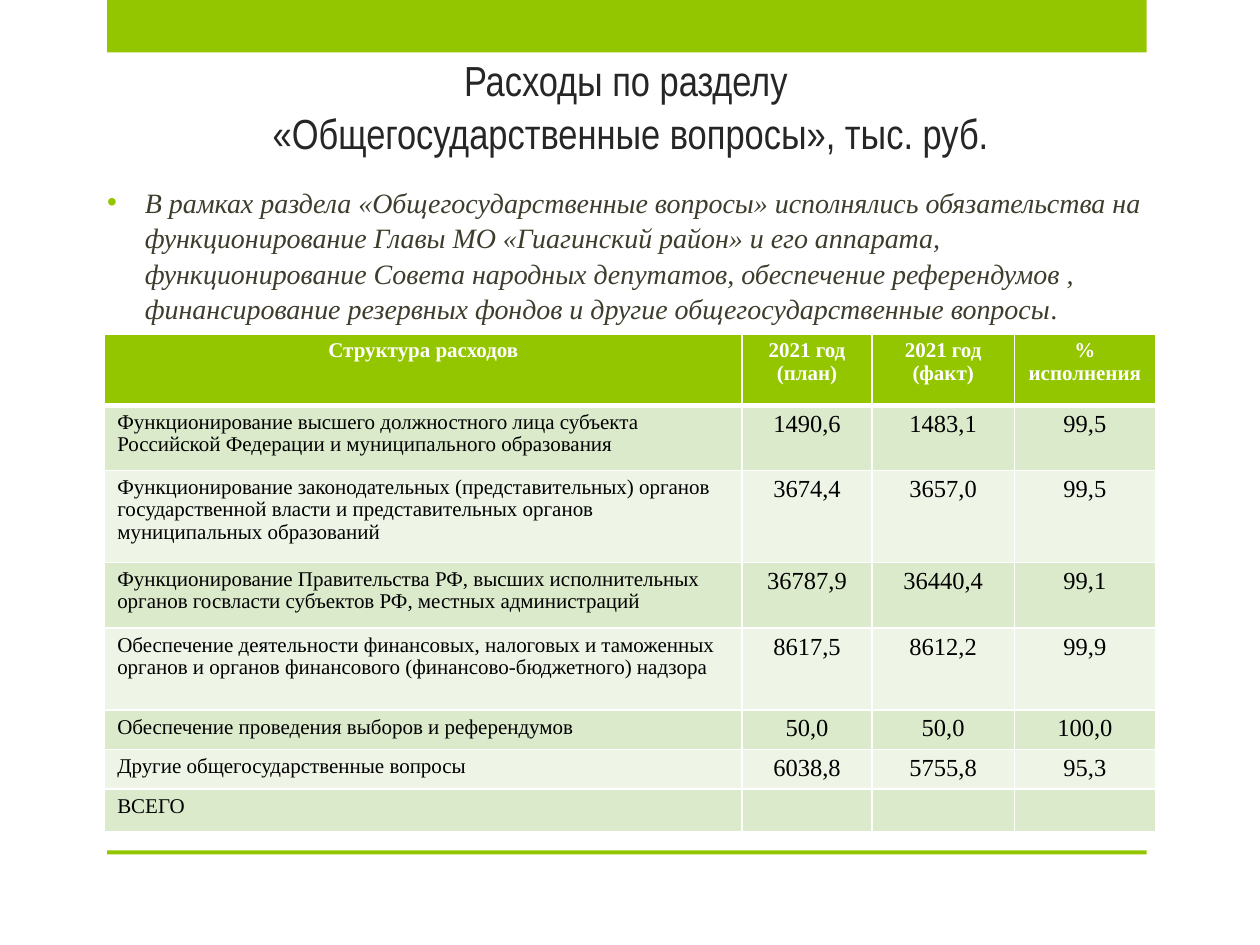
from lxml import etree
from pptx import Presentation
from pptx.dml.color import RGBColor
from pptx.enum.shapes import MSO_SHAPE
from pptx.enum.text import MSO_ANCHOR, MSO_AUTO_SIZE, PP_ALIGN
from pptx.oxml.ns import qn
from pptx.util import Pt

RECTANGLE = MSO_SHAPE.RECTANGLE
LEFT, CENTER = PP_ALIGN.LEFT, PP_ALIGN.CENTER
BOTTOM, MIDDLE = MSO_ANCHOR.BOTTOM, MSO_ANCHOR.MIDDLE
NO_AUTOFIT = MSO_AUTO_SIZE.NONE

COLORS = {
    "green": "94C600", "white": "FFFFFF", "black": "000000", "title": "262626",
    "body": "3E3D2D", "dark band": "DCEACC", "light band": "EEF5E7",
}
TITLE_FONT, TEXT_FONT = "Arial Narrow", "Times New Roman"

TITLE = "Расходы по разделу \v«Общегосударственные вопросы», тыс. руб."
BODY = (
    "В рамках раздела «Общегосударственные вопросы» исполнялись обязательства на "
    "функционирование Главы МО «Гиагинский район» и его аппарата, "
    "функционирование Совета народных депутатов, обеспечение референдумов , "
    "финансирование резервных фондов и другие общегосударственные вопросы"
)
HEADER = ["Структура расходов", "2021 год\n(план)", "2021 год (факт)", "% исполнения"]
EXPENSES = [
    ["Функционирование высшего должностного лица субъекта Российской Федерации "
     "и муниципального образования", "1490,6", "1483,1", "99,5"],
    ["Функционирование законодательных (представительных) органов государственной власти "
     "и представительных органов муниципальных образований", "3674,4", "3657,0", "99,5"],
    ["Функционирование Правительства РФ, высших исполнительных органов госвласти "
     "субъектов РФ, местных администраций", "36787,9", "36440,4", "99,1"],
    ["Обеспечение деятельности финансовых, налоговых и таможенных органов и органов "
     "финансового (финансово-бюджетного) надзора", "8617,5", "8612,2", "99,9"],
    ["Обеспечение проведения выборов и референдумов", "50,0", "50,0", "100,0"],
    ["Другие общегосударственные вопросы", "6038,8", "5755,8", "95,3"],
    ["ВСЕГО", "", "", ""],
]
COLUMN_WIDTHS = [364.3, 74.2, 81.4, 80.6]
ROW_HEIGHTS = [40.8, 37.4, 52.6, 37.4, 46.8, 22.6, 22.6, 22.6]
BANDS = [(61.2, 0, 594, 30), (61.2, 486, 594, 2.2)]
TITLE_BOX = (14.4, 37.4, 692, 56.2)
BODY_BOX = (54, 100, 612, 90.8)
TABLE_BOX = (59.8, 190.8, sum(COLUMN_WIDTHS), sum(ROW_HEIGHTS))


def add_text(paragraph, text, size, color, font=TEXT_FONT, bold=False, italic=False,
             align=LEFT, spacing=1.0):
    paragraph.alignment = align
    paragraph.line_spacing = spacing
    paragraph.space_before = paragraph.space_after = Pt(0)
    if not text:
        etree.SubElement(paragraph._p, qn("a:endParaRPr"), sz=str(size * 100))
        return
    for index, line in enumerate(text.split("\v")):
        if index:
            paragraph.add_line_break()
        run = paragraph.add_run()
        run.text = line
        run.font.name, run.font.size = font, Pt(size)
        run.font.bold, run.font.italic = bold, italic
        run.font.color.rgb = RGBColor.from_string(COLORS[color])


def place(shape, box, anchor):
    shape.left, shape.top, shape.width, shape.height = map(Pt, box)
    frame = shape.text_frame
    frame.word_wrap, frame.auto_size, frame.vertical_anchor = True, NO_AUTOFIT, anchor
    return frame.paragraphs[0]


def add_bullet(paragraph, color, indent):
    properties = paragraph._p.get_or_add_pPr()
    properties.set("marL", str(Pt(indent)))
    properties.set("indent", str(-Pt(indent)))
    bullet_color = etree.SubElement(properties, qn("a:buClr"))
    etree.SubElement(bullet_color, qn("a:srgbClr"), val=COLORS[color])
    etree.SubElement(properties, qn("a:buFont"), typeface="Arial")
    etree.SubElement(properties, qn("a:buChar"), char="•")


def add_borders(cell, row):
    properties = cell._tc.get_or_add_tcPr()
    widths = {"L": 1, "R": 1, "T": 3 if row == 1 else 1, "B": 3 if row == 0 else 1}
    for side, width in widths.items():
        line = etree.SubElement(properties, qn(f"a:ln{side}"), w=str(Pt(width)))
        fill = etree.SubElement(line, qn("a:solidFill"))
        etree.SubElement(fill, qn("a:srgbClr"), val=COLORS["white"])


def fill_cell(cell, text, row, column):
    add_borders(cell, row)
    band = "green" if row == 0 else "dark band" if row % 2 else "light band"
    cell.fill.solid()
    cell.fill.fore_color.rgb = RGBColor.from_string(COLORS[band])
    for index, line in enumerate(text.split("\n")):
        frame = cell.text_frame
        paragraph = frame.add_paragraph() if index else frame.paragraphs[0]
        add_text(paragraph, line, size=14 if row and column else 12,
                 color="black" if row else "white", bold=row == 0,
                 align=LEFT if row and column == 0 else CENTER, spacing=0.95)


def main():
    """Build the slide on general government expenses."""
    presentation = Presentation()
    presentation.slide_width, presentation.slide_height = Pt(720), Pt(540)
    slide = presentation.slides.add_slide(presentation.slide_layouts[1])

    for box in BANDS:
        shape = slide.shapes.add_shape(RECTANGLE, *map(Pt, box))
        shape.shadow.inherit = False
        shape.fill.solid()
        shape.fill.fore_color.rgb = RGBColor.from_string(COLORS["green"])
        shape.line.fill.background()

    title = place(slide.shapes.title, TITLE_BOX, BOTTOM)
    add_text(title, TITLE, size=24, color="title", font=TITLE_FONT, align=CENTER, spacing=1.05)

    body = place(slide.placeholders[1], BODY_BOX, MIDDLE)
    add_bullet(body, "green", indent=21.6)
    add_text(body, BODY, size=16, color="body", italic=True, spacing=1.05)
    add_text(body, ".", size=16, color="body", spacing=1.05)

    rows = [HEADER] + EXPENSES
    table = slide.shapes.add_table(len(rows), len(HEADER), *map(Pt, TABLE_BOX)).table
    for column, width in zip(table.columns, COLUMN_WIDTHS):
        column.width = Pt(width)
    for row, height in zip(table.rows, ROW_HEIGHTS):
        row.height = Pt(height)
    for row, texts in enumerate(rows):
        for column, text in enumerate(texts):
            fill_cell(table.cell(row, column), text, row, column)

    presentation.save("out.pptx")


if __name__ == "__main__":
    main()
